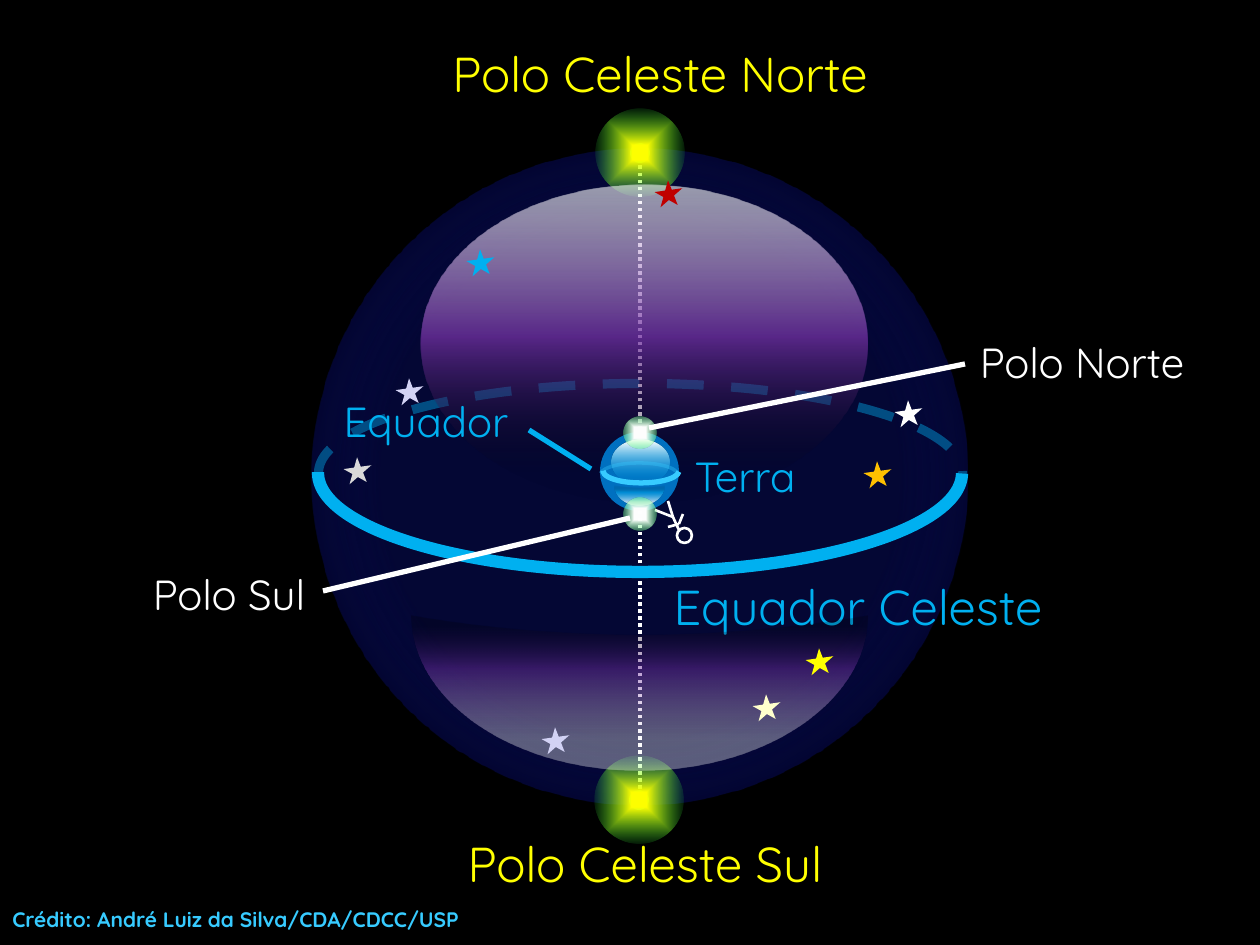
from lxml.etree import SubElement
from pptx import Presentation
from pptx.dml.color import RGBColor
from pptx.enum.dml import MSO_LINE
from pptx.enum.shapes import MSO_CONNECTOR, MSO_SHAPE
from pptx.enum.text import MSO_AUTO_SIZE, PP_ALIGN
from pptx.oxml.ns import qn
from pptx.util import Pt

SCALE = 914400 / 126
SKY = "00B0F0"
CYAN = "37CBFF"
YELLOW = "FFFF00"
WHITE = "FFFFFF"
GREEN = "21FF46"
FONT = "Quicksand"
TILT = 305.7

SPHERE_STOPS = [(40, "0A128C", 37), (64, "000000", 100), (71, "873AC0", 65)]
POLE_STOPS = [(12, YELLOW, 100), (77, GREEN, 2)]
EARTH_POLE_STOPS = [(25, WHITE, 100), (100, GREEN, 2)]
NORTH_CAP_STOPS = [(2, WHITE, 58), (48, "7030A0", 77), (91, "000000", 2)]
SOUTH_CAP_STOPS = [(19, WHITE, 35), (66, "7030A0", 47), (94, "000000", 22)]
EARTH_NORTH_STOPS = [(3, WHITE, 100), (85, SKY, 12), (100, "C2FFF0", 0)]
EARTH_SOUTH_STOPS = [(19, WHITE, 70), (66, SKY, 44), (100, "000000", 0)]

STARS = [
    (583, 254, WHITE), (84, 232, "D2D2F4"), (343, 34, "C00000"),
    (155, 103, SKY), (32, 311, "D9D9D9"), (230, 581, "D2D2F4"),
    (552, 315, "FFC000"), (494, 502, YELLOW), (441, 548, "FFFFCC"),
]
OBSERVER_LIMBS = [
    (24, 29, 18, 16), (18, 16, 0, 9), (18, 16, 13, 0),
    (24, 23, 13, 26), (28, 13, 24, 23),
]


def px(value):
    return round(value * SCALE)


def color(value):
    return RGBColor.from_string(value)


def apply(target, values):
    for name, value in values.items():
        setattr(target, name, value)


def inside(box, left, top, width, height):
    return box[0] + left, box[1] + top, width, height


def add_alpha(color_element, percent):
    SubElement(color_element, qn("a:alpha"), val=str(percent * 1000))


def style_line(line, tint, width, dash=None, opacity=100):
    line.fill.solid()
    line.fill.fore_color.rgb = color(tint)
    apply(line, {"width": Pt(width), "dash_style": dash})
    if opacity < 100:
        add_alpha(line._get_or_add_ln().find(".//" + qn("a:srgbClr")), opacity)


def add_figure(shapes, kind, box, rotation=0, fill=None):
    shape = shapes.add_shape(kind, *map(px, box))
    apply(shape, {"rotation": rotation})
    shape.shadow.inherit = False
    shape.line.fill.background()
    if fill:
        shape.fill.solid()
        shape.fill.fore_color.rgb = color(fill)
    else:
        shape.fill.background()
    return shape


def set_gradient(shape, stops, path=None, angle=0):
    properties = shape.element.spPr
    old_fill = properties.find(qn("a:noFill"))
    gradient = SubElement(properties, qn("a:gradFill"), rotWithShape="1")
    stop_list = SubElement(gradient, qn("a:gsLst"))
    for position, tint, opacity in stops:
        stop = SubElement(stop_list, qn("a:gs"), pos=str(position * 1000))
        add_alpha(SubElement(stop, qn("a:srgbClr"), val=tint), opacity)
    if path:
        route = SubElement(gradient, qn("a:path"), path=path)
        SubElement(route, qn("a:fillToRect"), dict.fromkeys("ltrb", "50000"))
    else:
        SubElement(gradient, qn("a:lin"), ang=str(angle * 60000), scaled="0")
    properties.replace(old_fill, gradient)


def add_ball(shapes, box, stops, path=None, angle=0):
    ball = add_figure(shapes, MSO_SHAPE.OVAL, box, TILT if path else 0)
    set_gradient(ball, stops, path, angle)


def add_moon(shapes, box, stops):
    moon = add_figure(shapes, MSO_SHAPE.MOON, box, 270)
    moon.adjustments[0] = 0.875
    set_gradient(moon, stops)


def add_arc(shapes, box, start, end, **line):
    arc = add_figure(shapes, MSO_SHAPE.ARC, box, 90)
    arc.adjustments[0] = start
    arc.adjustments[1] = end
    style_line(arc.line, **line)


def add_line(shapes, box, points, **line):
    x1, y1, x2, y2 = points
    left, top = box[:2]
    ends = (left + x1, top + y1, left + x2, top + y2)
    connector = shapes.add_connector(MSO_CONNECTOR.STRAIGHT, *map(px, ends))
    style_line(connector.line, **line)
    SubElement(connector.element.spPr, qn("a:effectLst"))


def add_label(page, box, text, size, tint, bold=False, align=PP_ALIGN.CENTER):
    label = page.shapes.add_textbox(*map(px, box))
    apply(label.text_frame, {"word_wrap": True, "auto_size": MSO_AUTO_SIZE.SHAPE_TO_FIT_TEXT})
    para = label.text_frame.paragraphs[0]
    para.alignment = align
    span = para.add_run()
    span.text = text
    apply(span.font, {"name": FONT, "size": Pt(size), "bold": bold})
    span.font.color.rgb = color(tint)


def draw_celestial_pole(page, box):
    group = page.shapes.add_group_shape().shapes
    add_figure(group, MSO_SHAPE.OVAL, inside(box, 34, 34, 20, 20), TILT, GREEN)
    add_ball(group, box, POLE_STOPS, "shape")


def draw_sphere(page, box):
    shapes = page.shapes
    add_ball(shapes, box, SPHERE_STOPS, "circle")
    add_arc(shapes, inside(box, 239, 2, 179, 644), 53.01, 162.19,
            tint=SKY, width=5.25, dash=MSO_LINE.DASH, opacity=42)
    add_line(shapes, box, (328, 654, 328, 9), tint=WHITE, width=2, dash=MSO_LINE.ROUND_DOT)
    draw_celestial_pole(page, inside(box, 284, -40, 88, 88))
    add_ball(shapes, inside(box, 109, 36, 446, 318), NORTH_CAP_STOPS, angle=90)
    draw_celestial_pole(page, inside(box, 283, 607, 88, 88))
    add_label(page, inside(box, 308, 421, 476, 72), "Equador Celeste", 28, SKY)
    add_moon(shapes, inside(box, 250, 316, 155, 456), SOUTH_CAP_STOPS)


def draw_earth(page, box):
    group = page.shapes.add_group_shape().shapes
    add_figure(group, MSO_SHAPE.OVAL, box, TILT, "0070C0")
    add_ball(group, inside(box, 12, 8, 57, 44), EARTH_NORTH_STOPS, angle=90)
    add_moon(group, inside(box, 30, 39, 19, 49), EARTH_SOUTH_STOPS)
    add_label(page, inside(box, -29, 12, 348, 63), "Terra", 24, SKY)


def draw_observer(page, box):
    group = page.shapes.add_group_shape().shapes
    head = add_figure(group, MSO_SHAPE.OVAL, inside(box, 22, 27, 15, 15))
    style_line(head.line, WHITE, 1.5)
    for limb in OBSERVER_LIMBS:
        add_line(group, box, limb, tint=WHITE, width=1.5)


def draw_stars(page, box):
    group = page.shapes.add_group_shape().shapes
    for left, top, tint in STARS:
        star = add_figure(group, MSO_SHAPE.STAR_5_POINT, inside(box, left, top, 29, 25), 138.8, tint)
        star.element.spPr.find(qn("a:xfrm")).set("flipH", "1")


def draw_earth_marks(page, box):
    shapes = page.shapes
    add_arc(shapes, inside(box, 29, 1, 24, 76), 162.66, 54.09, tint=CYAN, width=3)
    add_arc(shapes, inside(box, 27, 4, 24, 78), 55.39, 160.98, tint=CYAN, width=2, opacity=35)
    add_label(page, inside(box, -308, -43, 268, 63), "Equador", 24, SKY)
    add_line(shapes, box, (-71, -2, -9, 37), tint=SKY, width=3)
    for top in (-15, 66):
        add_ball(shapes, inside(box, 24, top, 32, 32), EARTH_POLE_STOPS, "shape")
    add_label(page, inside(box, 348, -102, 268, 63), "Polo Norte", 24, WHITE)
    add_line(shapes, box, (365, -68, 49, -4), tint=WHITE, width=3)
    add_label(page, inside(box, -505, 130, 268, 63), "Polo Sul", 24, WHITE)
    add_line(shapes, box, (-277, 159, 30, 86), tint=WHITE, width=3)


def main():
    deck = Presentation()
    apply(deck, {"slide_width": px(1260), "slide_height": px(945)})
    page = deck.slides.add_slide(deck.slide_layouts[6])
    page.background.fill.solid()
    page.background.fill.fore_color.rgb = color("000000")
    sphere = (312, 149, 655, 655)
    earth = (600, 432, 79, 79)
    draw_sphere(page, sphere)
    draw_earth(page, earth)
    add_arc(page.shapes, inside(sphere, 229, 2, 198, 644), 162.06, 54.09, tint=SKY, width=7)
    draw_observer(page, (655, 501, 37, 42))
    draw_stars(page, sphere)
    add_label(page, (422, 37, 476, 72), "Polo Celeste Norte", 28, YELLOW)
    add_label(page, (373, 827, 544, 72), "Polo Celeste Sul", 28, YELLOW)
    add_label(page, (0, 900, 1295, 38), "Crédito: André Luiz da Silva/CDA/CDCC/USP",
              12, CYAN, True, PP_ALIGN.LEFT)
    draw_earth_marks(page, earth)
    deck.save("out.pptx")


if __name__ == "__main__":
    main()
